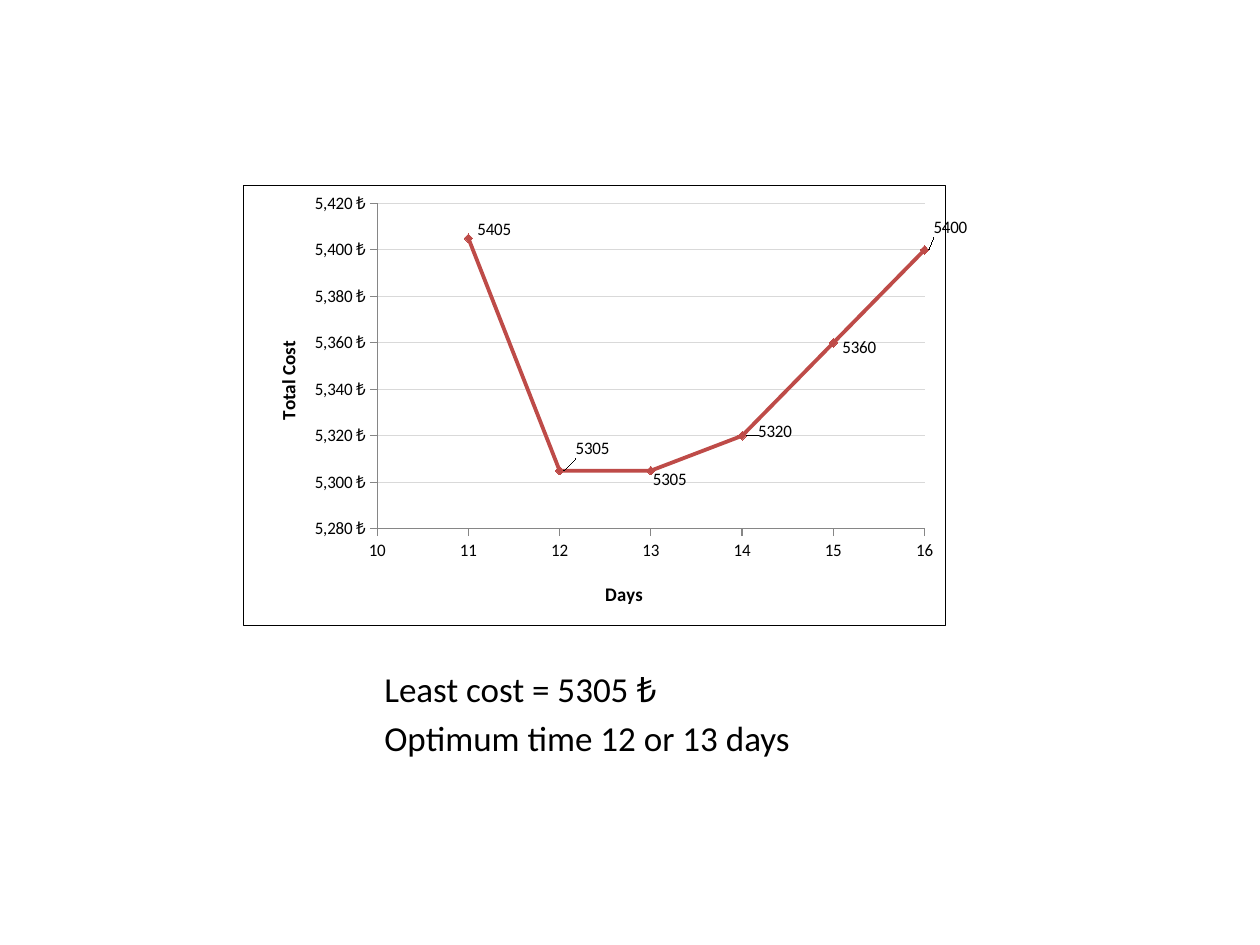
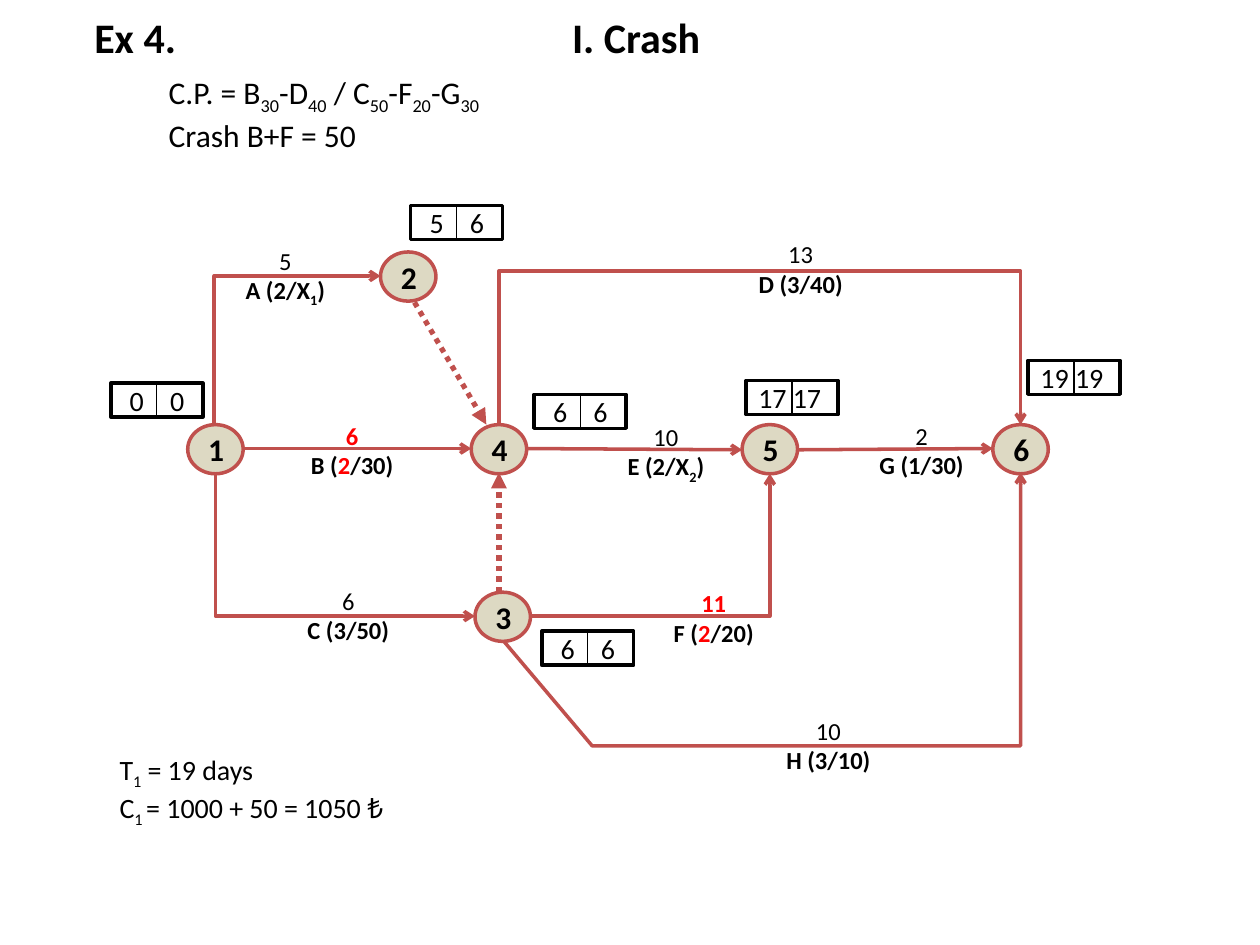
from dataclasses import dataclass

from lxml.etree import SubElement
from pptx import Presentation
from pptx.chart.data import XyChartData
from pptx.dml.color import RGBColor
from pptx.enum.chart import XL_CHART_TYPE as ChartType
from pptx.enum.chart import XL_LABEL_POSITION as LabelPos
from pptx.enum.chart import XL_MARKER_STYLE as Marker
from pptx.enum.chart import XL_TICK_MARK as Tick
from pptx.enum.dml import MSO_LINE as Dash
from pptx.enum.shapes import MSO_CONNECTOR as Conn
from pptx.enum.shapes import MSO_SHAPE as Shape
from pptx.enum.text import MSO_ANCHOR as Anchor
from pptx.enum.text import MSO_AUTO_SIZE as AutoSize
from pptx.enum.text import PP_ALIGN as Align
from pptx.oxml import parse_xml
from pptx.oxml.ns import nsdecls, qn
from pptx.util import Emu, Pt

PX = 9144
FONT = "Calibri"
BLACK = RGBColor(0x00, 0x00, 0x00)
WHITE = RGBColor(0xFF, 0xFF, 0xFF)
RED = RGBColor(0xFF, 0x00, 0x00)
EDGE = RGBColor(0xC0, 0x50, 0x4D)
NODE = RGBColor(0xDD, 0xD9, 0xC3)
CURVE = RGBColor(0xBE, 0x4B, 0x48)
GRID = RGBColor(0xD9, 0xD9, 0xD9)
AXIS = RGBColor(0x86, 0x86, 0x86)


@dataclass(frozen=True)
class Node:
    x: int
    y: int
    name: str


@dataclass(frozen=True)
class TimeBox:
    x: int
    y: int
    early: str
    late: str


@dataclass(frozen=True)
class Activity:
    x: int
    y: int
    days: str
    name: str


@dataclass(frozen=True)
class Arrow:
    points: tuple[tuple[int, int], ...]
    dummy: bool = False


@dataclass(frozen=True)
class CostPoint:
    days: int
    cost: int
    dx: float
    dy: float


COSTS = [
    CostPoint(16, 5400, 0, -0.05),
    CostPoint(15, 5360, 0, 0.01),
    CostPoint(14, 5320, 0.01, -0.01),
    CostPoint(13, 5305, -0.01, 0.02),
    CostPoint(12, 5305, 0.01, -0.05),
    CostPoint(11, 5405, 0, -0.02),
]
ARROWS = [
    Arrow(((418, 356), (589, 357))),
    Arrow(((171, 375), (171, 489), (377, 489))),
    Arrow(((170, 337), (170, 219), (302, 219))),
    Arrow(((399, 508), (470, 592), (810, 592), (810, 375))),
    Arrow(((396, 337), (396, 215), (810, 215), (810, 337))),
    Arrow(((192, 356), (374, 356))),
    Arrow(((633, 357), (788, 356))),
    Arrow(((420, 489), (611, 489), (611, 376))),
    Arrow(((329, 240), (386, 337)), dummy=True),
    Arrow(((396, 470), (396, 375)), dummy=True),
]
NODES = [
    Node(149, 337, "1"),
    Node(302, 200, "2"),
    Node(377, 470, "3"),
    Node(374, 337, "4"),
    Node(589, 337, "5"),
    Node(788, 337, "6"),
]
TIME_BOXES = [
    TimeBox(326, 163, "5", "6"),
    TimeBox(424, 313, "6", "6"),
    TimeBox(430, 501, "6", "6"),
    TimeBox(88, 304, "0", "0"),
    TimeBox(592, 302, "17", "17"),
    TimeBox(816, 286, "19", "19"),
]
ACTIVITIES = [
    Activity(160, 190, "5", "A (2/X_1_)"),
    Activity(213, 329, "*6*", "B (*2*/30)"),
    Activity(210, 460, "6", "C (3/50)"),
    Activity(569, 185, "13", "D (3/40)"),
    Activity(462, 330, "10", "E (2/X_2_)"),
    Activity(500, 462, "*11*", "F (*2*/20)"),
    Activity(665, 329, "2", "G (1/30)"),
    Activity(591, 563, "10", "H (3/10)"),
]


def box(x: int, y: int, w: int, h: int) -> list[Emu]:
    return [Emu(v * PX) for v in (x, y, w, h)]


def style(font, size: int, bold: bool = False, color: RGBColor = BLACK) -> None:
    font.name, font.size, font.bold = FONT, Pt(size), bold
    font.color.rgb = color


def write_marked(p, text: str, size: int, bold: bool = False) -> None:
    """Underscores enclose subscripts and asterisks enclose red text."""
    for i, part in enumerate(text.split("_")):
        for j, piece in enumerate(part.split("*")):
            if piece:
                r = p.add_run()
                r.text = piece
                style(r.font, size, bold, RED if j % 2 else BLACK)
                if i % 2:
                    r._r.get_or_add_rPr().set("baseline", "-25000")


def add_text(s, at: tuple[int, int, int, int], lines: list[str], size: int):
    tf = s.shapes.add_textbox(*box(*at)).text_frame
    tf.word_wrap = True
    for i, line in enumerate(lines):
        p = tf.add_paragraph() if i else tf.paragraphs[0]
        write_marked(p, line, size)
    return tf


def fill_placeholder(sp, at: tuple[int, int, int, int], text: str, size: int, bold: bool) -> None:
    sp.left, sp.top, sp.width, sp.height = box(*at)
    tf = sp.text_frame
    tf.text = text
    tf.auto_size = AutoSize.NONE
    tf.vertical_anchor = Anchor.TOP
    for p in tf.paragraphs:
        p.alignment = Align.LEFT
        style(p.runs[0].font, size, bold)
        pPr = p._p.get_or_add_pPr()
        pPr.set("marL", "0")
        pPr.set("indent", "0")
        SubElement(pPr, qn("a:buNone"))


def set_line(line, color: RGBColor, width: float) -> None:
    line.color.rgb = color
    line.width = Pt(width)


def add_line(s, start: tuple[int, int], end: tuple[int, int], color: RGBColor, width: float):
    c = s.shapes.add_connector(Conn.STRAIGHT, *box(*start, *end))
    set_line(c.line, color, width)
    SubElement(c._element.spPr, qn("a:effectLst"))
    return c


def add_arrow(s, arrow: Arrow) -> None:
    start, *rest = arrow.points
    width = 3 if arrow.dummy else 2
    if len(rest) == 1:
        sp = add_line(s, start, rest[0], EDGE, width)
    else:
        builder = s.shapes.build_freeform(*start, scale=PX)
        builder.add_line_segments(rest, close=False)
        sp = builder.convert_to_shape()
        sp.shadow.inherit = False
        sp.fill.background()
        set_line(sp.line, EDGE, width)
    if arrow.dummy:
        sp.line.dash_style = Dash.ROUND_DOT
    ln = sp.line._get_or_add_ln()
    SubElement(ln, qn("a:tailEnd"), type="triangle" if arrow.dummy else "arrow")


def add_filled(s, kind: Shape, at: tuple[int, int, int, int], fill: RGBColor, line: RGBColor):
    sp = s.shapes.add_shape(kind, *box(*at))
    sp.shadow.inherit = False
    sp.fill.solid()
    sp.fill.fore_color.rgb = fill
    set_line(sp.line, line, 2)
    sp.text_frame.vertical_anchor = Anchor.MIDDLE
    return sp


def add_node(s, node: Node) -> None:
    sp = add_filled(s, Shape.OVAL, (node.x, node.y, 44, 39), NODE, EDGE)
    p = sp.text_frame.paragraphs[0]
    p.text = node.name
    p.alignment = Align.CENTER
    style(p.runs[0].font, 18, True)


def add_time_box(s, t: TimeBox) -> None:
    sp = add_filled(s, Shape.RECTANGLE, (t.x, t.y, 73, 27), WHITE, BLACK)
    one_digit = len(t.early) == 1
    tf = sp.text_frame
    tf.margin_left = Emu((15 if one_digit else 10) * PX)
    tf.margin_right = 0
    p = tf.paragraphs[0]
    p.text = f"{t.early}\t{t.late}" if one_digit else f"{t.early} {t.late}"
    p.alignment = Align.LEFT
    for r in p.runs:
        style(r.font, 16)
    if one_digit:
        tabs = SubElement(p._p.get_or_add_pPr(), qn("a:tabLst"))
        SubElement(tabs, qn("a:tab"), pos=str(32 * PX), algn="l")
    divider = add_line(s, (t.x + 36, t.y), (t.x + 36, t.y + 27), BLACK, 0.75)
    divider.begin_connect(sp, 0)
    divider.end_connect(sp, 2)


def add_activity(s, a: Activity) -> None:
    tf = add_text(s, (a.x, a.y, 133, 57), [], 14)
    write_marked(tf.paragraphs[0], a.days, 14, "*" in a.days)
    write_marked(tf.add_paragraph(), a.name, 14, True)
    for p in tf.paragraphs:
        p.alignment = Align.CENTER


def set_layout(owner, index: int, **values) -> None:
    for old in owner.findall(qn("c:layout")):
        owner.remove(old)
    layout = parse_xml(f"<c:layout {nsdecls('c')}><c:manualLayout/></c:layout>")
    for tag, value in values.items():
        SubElement(layout[0], qn(f"c:{tag}"), val=str(value))
    owner.insert(index, layout)


def format_axis(axis, title: str, low: int, high: int, step: int, x: float, y: float) -> None:
    axis.minimum_scale, axis.maximum_scale, axis.major_unit = low, high, step
    axis.major_tick_mark, axis.minor_tick_mark = Tick.OUTSIDE, Tick.NONE
    set_line(axis.format.line, AXIS, 0.75)
    style(axis.tick_labels.font, 10)
    tf = axis.axis_title.text_frame
    tf.text = title
    style(tf.paragraphs[0].runs[0].font, 11, True)
    set_layout(axis.axis_title._element, 1, xMode="edge", yMode="edge", x=x, y=y)


def add_cost_chart(s) -> None:
    data = XyChartData()
    points = data.add_series("Series 1")
    for c in COSTS:
        points.add_data_point(c.days, c.cost)
    chart = s.shapes.add_chart(ChartType.XY_SCATTER_LINES, *box(193, 147, 575, 350), data).chart
    chart.has_title = chart.has_legend = False
    style(chart.font, 10)
    chart.plots[0].vary_by_categories = False
    days, cost = chart.category_axis, chart.value_axis
    format_axis(days, "Days", 10, 16, 1, 0.51, 0.89)
    format_axis(cost, "Total Cost", 5280, 5420, 20, 0.04, 0.34)
    days.has_major_gridlines = False
    cost.has_major_gridlines = True
    set_line(cost.major_gridlines.format.line, GRID, 0.75)
    cost.tick_labels.number_format = '#,##0\\ "₺"'
    cost.tick_labels.number_format_is_linked = False
    cost.axis_title.text_frame._txBody.bodyPr.set("rot", "-5400000")

    series = chart.plots[0].series[0]
    series.smooth = False
    set_line(series.format.line, CURVE, 2.25)
    series.marker.style, series.marker.size = Marker.DIAMOND, 5
    series.marker.format.fill.solid()
    series.marker.format.fill.fore_color.rgb = CURVE
    set_line(series.marker.format.line, CURVE, 0.75)
    for i in range(len(COSTS)):
        series.points[i].data_label.position = LabelPos.RIGHT
    for c, label in zip(COSTS, series._element.iter(qn("c:dLbl"))):
        set_layout(label, 1, x=c.dx, y=c.dy)

    root = chart._chartSpace
    set_layout(root.chart.plotArea, 0, layoutTarget="inner", xMode="edge", yMode="edge",
               x=0.19, y=0.04, w=0.78, h=0.74)
    root.chart.addnext(parse_xml(
        f'<c:spPr {nsdecls("c", "a")}><a:solidFill><a:srgbClr val="{WHITE}"/></a:solidFill>'
        f'<a:ln w="9525"><a:solidFill><a:srgbClr val="{BLACK}"/></a:solidFill></a:ln></c:spPr>'))


def build_cost_slide(prs) -> None:
    s = prs.slides.add_slide(prs.slide_layouts[1])
    title = s.shapes.title._element
    title.getparent().remove(title)
    fill_placeholder(s.placeholders[1], (295, 525, 417, 188),
                     "Least cost = 5305 ₺\nOptimum time 12 or 13 days", 20, False)
    add_cost_chart(s)


def build_crash_slide(prs) -> None:
    s = prs.slides.add_slide(prs.slide_layouts[5])
    fill_placeholder(s.shapes.title, (444, 4, 137, 50), "I. Crash", 24, True)
    heading = add_text(s, (65, 4, 296, 50), ["Ex 4."], 24)
    heading.paragraphs[0].runs[0].font.bold = True
    add_text(s, (124, 53, 628, 71),
             ["C.P. = B_30_-D_40_ / C_50_-F_20_-G_30_", "Crash B+F = 50"], 18)
    for draw, items in ((add_arrow, ARROWS), (add_node, NODES),
                        (add_time_box, TIME_BOXES), (add_activity, ACTIVITIES)):
        for item in items:
            draw(s, item)
    add_text(s, (85, 592, 501, 64), ["T_1_ = 19 days", "C_1 _= 1000 + 50 = 1050 ₺"], 16)


def main() -> None:
    prs = Presentation()
    prs.slide_width, prs.slide_height = Emu(1000 * PX), Emu(750 * PX)
    build_cost_slide(prs)
    build_crash_slide(prs)
    prs.save("out.pptx")


if __name__ == "__main__":
    main()
